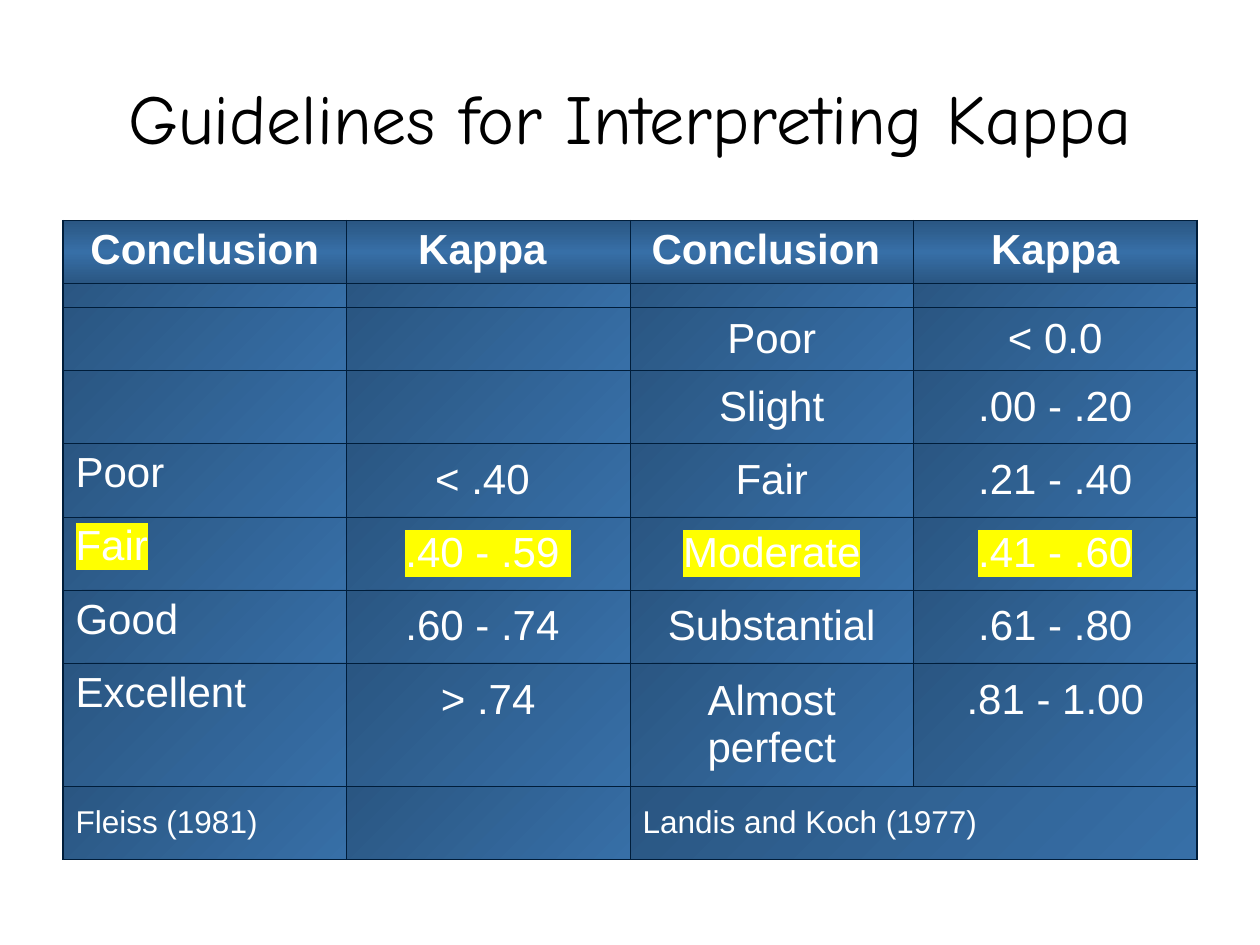
from lxml import etree
from pptx import Presentation
from pptx.dml.color import RGBColor
from pptx.enum.text import MSO_ANCHOR, PP_ALIGN
from pptx.oxml import parse_xml
from pptx.oxml.ns import qn
from pptx.util import Pt

CENTER, LEFT = PP_ALIGN.CENTER, PP_ALIGN.LEFT
MIDDLE, TOP = MSO_ANCHOR.MIDDLE, MSO_ANCHOR.TOP
NAMESPACE = "http://schemas.openxmlformats.org/drawingml/2006/main"

# Content
TITLE = "Guidelines for Interpreting Kappa"
ROWS = [
    ("Conclusion", "Kappa ", "Conclusion ", "Kappa"),
    ("", "", "", ""),
    ("", "", "Poor", "< 0.0"),
    ("", "", "Slight", ".00 - .20"),
    ("Poor", "< .40 ", "Fair", ".21 - .40"),
    ("Fair", ".40 - .59 ", "Moderate", ".41 - .60"),
    ("Good", ".60 - .74 ", "Substantial", ".61 - .80"),
    ("Excellent", "> .74", "Almost perfect", ".81 - 1.00"),
    ("Fleiss (1981)", "", "Landis and Koch (1977)", ""),
]
HEADER, SPACER, MARKED, TALL, SOURCES = 0, 1, 5, 7, 8
HEIGHTS = [36, 13.7, 36, 41.8, 41.8, 41.8, 41.8, 70.6, 41.8]
COLUMN_WIDTH = 162
LAST_COLUMN = 3

# Style
DARK, LIGHT, BORDER = "2A5682", "376FA7", "001D3A"
WHITE, BLACK, YELLOW = "FFFFFF", "000000", "FFFF00"
HEADER_GRADIENT = ([(0, DARK), (50, LIGHT), (100, DARK)], 90)
BODY_GRADIENT = ([(0, DARK), (100, LIGHT)], 45)


def color(value):
    return RGBColor.from_string(value)


def add_xml(parent, xml):
    tag, rest = xml[1:].split(" ", 1)
    element = parse_xml(f'<{tag} xmlns:a="{NAMESPACE}" {rest}')
    parent.append(element)
    return element


def add_text(paragraph, text, font, size, value, bold=False):
    span = paragraph.add_run()
    span.text = text
    span.font.name, span.font.size, span.font.bold = font, Pt(size), bold
    span.font.color.rgb = color(value)
    return span


def highlight(span, value):
    fill = span.font._element.find(qn("a:solidFill"))
    mark = etree.Element(qn("a:highlight"))
    etree.SubElement(mark, qn("a:srgbClr"), val=value)
    fill.addnext(mark)


def style_cell(cell, row, column):
    properties = cell._tc.get_or_add_tcPr()
    # The outer frame is thicker than the inner grid
    right_edge = column == LAST_COLUMN or (row == SOURCES and column == 2)
    edges = {"L": column == 0, "R": right_edge, "T": row == HEADER, "B": row == SOURCES}
    for side, outer in edges.items():
        width = Pt(1 if outer else 0.25)
        add_xml(properties, f'<a:ln{side} w="{width}"><a:solidFill>'
                f'<a:srgbClr val="{BORDER}"/></a:solidFill></a:ln{side}>')
    stops, angle = HEADER_GRADIENT if row == HEADER else BODY_GRADIENT
    stop_xml = "".join(f'<a:gs pos="{position * 1000}"><a:srgbClr val="{value}"/></a:gs>'
                       for position, value in stops)
    add_xml(properties, f'<a:gradFill rotWithShape="1"><a:gsLst>{stop_xml}</a:gsLst>'
            f'<a:lin ang="{angle * 60000}" scaled="1"/></a:gradFill>')


def fill_cell(cell, text, row, column):
    paragraph = cell.text_frame.paragraphs[0]
    if not text:
        # Keeps the thin spacer row from growing
        size = 4 if row == SPACER else 18
        add_xml(paragraph._p, f'<a:endParaRPr sz="{size * 100}"/>')
        return
    left = column == 0 and row != HEADER or row == SOURCES
    paragraph.alignment = LEFT if left else CENTER
    spacing = etree.SubElement(paragraph._p.get_or_add_pPr(), qn("a:spcBef"))
    etree.SubElement(spacing, qn("a:spcPct"), val="20000")
    at_top = row == HEADER or (column == 0 and row != SOURCES)
    cell.vertical_anchor = TOP if at_top else MIDDLE
    if row == TALL and column in (1, 3):
        # Aligns with the first line of the two-line label
        cell.vertical_anchor, cell.margin_top = TOP, Pt(8)
    span = add_text(paragraph, text, "Arial", 18 if row == SOURCES else 24,
                    WHITE, row == HEADER)
    if row == MARKED:
        highlight(span, YELLOW)


def main():
    deck = Presentation()
    deck.slide_width, deck.slide_height = Pt(720), Pt(540)
    page = deck.slides.add_slide(deck.slide_layouts[5])

    # Title
    title = page.shapes.title
    title.left, title.top, title.width, title.height = Pt(36), Pt(21.6), Pt(648), Pt(90)
    title.text_frame.vertical_anchor = MIDDLE
    paragraph = title.text_frame.paragraphs[0]
    paragraph.alignment = CENTER
    add_text(paragraph, TITLE, "Comic Neue", 40, BLACK)

    # Table
    columns = len(ROWS[0])
    table = page.shapes.add_table(len(ROWS), columns, Pt(36), Pt(126),
                                  Pt(COLUMN_WIDTH * columns), Pt(sum(HEIGHTS))).table
    table.first_row = table.horz_banding = False
    for column in table.columns:
        column.width = Pt(COLUMN_WIDTH)
    for row, texts in enumerate(ROWS):
        table.rows[row].height = Pt(HEIGHTS[row])
        for column, text in enumerate(texts):
            cell = table.cell(row, column)
            style_cell(cell, row, column)
            fill_cell(cell, text, row, column)
    table.cell(SOURCES, 2).merge(table.cell(SOURCES, LAST_COLUMN))

    deck.save("out.pptx")


if __name__ == "__main__":
    main()
